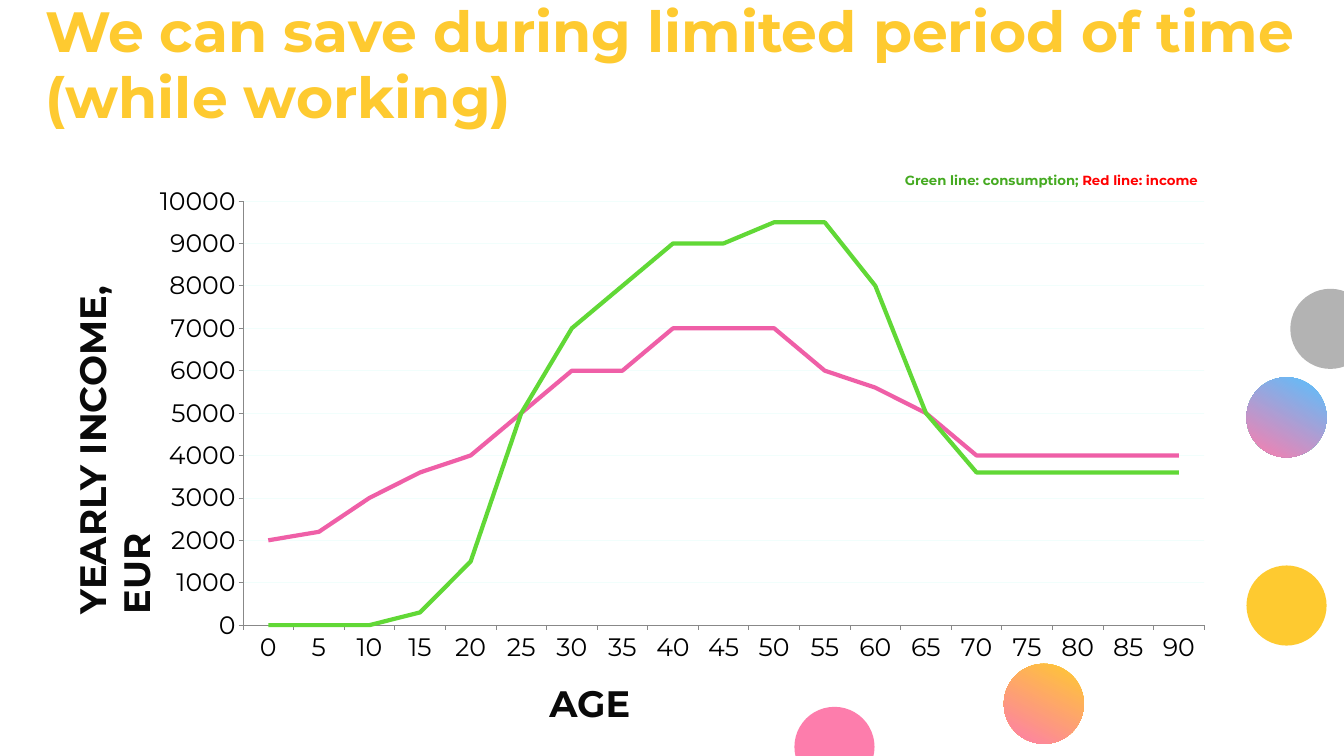
import pptx
import pptx.chart.data
import pptx.dml.color
import pptx.enum.chart
import pptx.enum.shapes
import pptx.enum.text
import pptx.util
from lxml import etree
from pptx.oxml.ns import qn

Inches, Pt = pptx.util.Inches, pptx.util.Pt
RGB = pptx.dml.color.RGBColor
ANCHOR = pptx.enum.text.MSO_ANCHOR

YELLOW = RGB(0xFE, 0xCA, 0x30)
PINK = RGB(0xFD, 0x7D, 0xAC)
BLUE = RGB(0x56, 0xC1, 0xFF)
GREY = RGB(0xB3, 0xB3, 0xB3)
INK = RGB(0x0A, 0x0A, 0x0A)
BLACK = RGB(0, 0, 0)
RED = RGB(0xFF, 0, 0)
DARK_GREEN = RGB(0x45, 0xAA, 0x21)
INCOME_PINK = RGB(0xEF, 0x5F, 0xA7)
LINE_GREEN = RGB(0x61, 0xD8, 0x36)
GRID = RGB(0xF1, 0xFE, 0xFC)
AXIS = RGB(0x88, 0x88, 0x88)

FONT = "Montserrat"
WIDTH, HEIGHT = 17.78, 10
CIRCLE = 1.06

CIRCLES = [  # left, top, colours (two make a gradient)
    (17.07, 3.82, [GREY]),
    (16.49, 7.48, [YELLOW]),
    (10.51, 9.35, [PINK]),
    (16.49, 4.99, [BLUE, PINK]),
    (13.28, 8.78, [YELLOW, PINK]),
]
AGES = [str(age) for age in range(0, 91, 5)]
SERIES = [
    ("Series 1", INCOME_PINK,
     [2000, 2200, 3000, 3600, 4000, 5000, 6000, 6000, 7000, 7000, 7000,
      6000, 5600, 5000] + [4000] * 5),
    ("Series 2", LINE_GREEN,
     [0, 0, 0, 300, 1500, 5000, 7000, 8000, 9000, 9000, 9500,
      9500, 8000, 5000] + [3600] * 5),
]
PLOT_AREA = {"x": 0.1, "y": 0.05, "w": 0.88, "h": 0.85}


def box(left, top, width, height):
    return [Inches(v) for v in (left, top, width, height)]


def set_font(font, size, color, bold=False):
    font.name, font.size, font.bold = FONT, Pt(size), bold
    font.color.rgb = color


def add_circle(slide, left, top, colors):
    sp = slide.shapes.add_shape(pptx.enum.shapes.MSO_SHAPE.OVAL,
                                *box(left, top, CIRCLE, CIRCLE))
    sp.shadow.inherit = False
    sp.line.fill.background()
    if len(colors) == 1:
        sp.fill.solid()
        sp.fill.fore_color.rgb = colors[0]
    else:
        sp.fill.gradient()
        sp.fill.gradient_angle = 360 - 118
        for stop, color in zip(sp.fill.gradient_stops, colors):
            stop.color.rgb = color


def fill_title(slide):
    title = slide.shapes.title
    title.left, title.top, title.width, title.height = box(0.47, 0, 16.82, 2.6)
    tf = title.text_frame
    tf.auto_size = pptx.enum.text.MSO_AUTO_SIZE.NONE
    tf.vertical_anchor = ANCHOR.TOP
    tf.margin_left = tf.margin_right = Inches(0.13)
    tf.margin_top = 0

    p = tf.paragraphs[0]
    p.text = "We can save during limited period of time (while working)"
    p.line_spacing = 0.97
    set_font(p.font, 54, YELLOW, bold=True)

    # Colour key, indented to the right end of the chart
    key = tf.add_paragraph()
    key.space_before = Pt(38)
    key._p.get_or_add_pPr().set("marL", str(Inches(11.37)))
    for text, color in (("Green line: consumption; ", DARK_GREEN),
                        ("Red line: income", RED)):
        r = key.add_run()
        r.text = text
        set_font(r.font, 12.6, color, bold=True)
    for p in tf.paragraphs:
        p.alignment = pptx.enum.text.PP_ALIGN.LEFT


def add_axis_label(slide, text, left, top, width, height, rotation=0):
    sp = slide.shapes.add_textbox(*box(left, top, width, height))
    sp.rotation = rotation
    tf = sp.text_frame
    tf.word_wrap = True
    tf.vertical_anchor = ANCHOR.MIDDLE
    p = tf.paragraphs[0]
    p.text = text
    set_font(p.font, 35, INK, bold=True)


def set_plot_area(chart):
    area = chart._chartSpace.chart.plotArea
    layout = area.find(qn("c:layout"))
    if layout is None:
        layout = etree.Element(qn("c:layout"))
        area.insert(0, layout)
    manual = etree.SubElement(layout, qn("c:manualLayout"))
    settings = {"layoutTarget": "inner", "xMode": "edge", "yMode": "edge"}
    for tag, value in {**settings, **PLOT_AREA}.items():
        etree.SubElement(manual, qn("c:" + tag)).set("val", str(value))


def add_line_chart(slide):
    data = pptx.chart.data.CategoryChartData()
    data.categories = AGES
    for name, _, values in SERIES:
        data.add_series(name, values)
    chart = slide.shapes.add_chart(pptx.enum.chart.XL_CHART_TYPE.LINE,
                                   *box(1.77, 2.33, 14.45, 6.6), data).chart
    chart.has_legend = chart.has_title = False
    chart.font.name, chart.font.size = "Roboto", Pt(10)
    set_plot_area(chart)

    plot = chart.plots[0]
    plot.vary_by_categories = False
    for series, (_, color, _) in zip(plot.series, SERIES):
        series.smooth = False
        series.format.line.color.rgb = color
        series.format.line.width = Pt(4)

    for axis in (chart.category_axis, chart.value_axis):
        axis.major_tick_mark = pptx.enum.chart.XL_TICK_MARK.OUTSIDE
        axis.format.line.color.rgb = AXIS
        set_font(axis.tick_labels.font, 24, BLACK)
    axis = chart.value_axis
    axis.minimum_scale, axis.maximum_scale, axis.major_unit = 0, 10000, 1000
    axis.has_major_gridlines = True
    axis.major_gridlines.format.line.color.rgb = GRID
    axis.major_gridlines.format.line.width = Pt(0.75)


def main():
    prs = pptx.Presentation()
    prs.slide_width, prs.slide_height = Inches(WIDTH), Inches(HEIGHT)
    slide = prs.slides.add_slide(prs.slide_layouts[5])  # Title Only

    # Decoration behind the content
    for left, top, colors in CIRCLES:
        add_circle(slide, left, top, colors)

    # Title, chart and axis names
    fill_title(slide)
    add_line_chart(slide)
    add_axis_label(slide, "YEARLY INCOME, EUR", -1.31, 5.14, 5.62, 0.55, 270)
    add_axis_label(slide, "AGE", 7.17, 9.05, 2.03, 0.48)
    prs.save("out.pptx")


if __name__ == "__main__":
    main()
